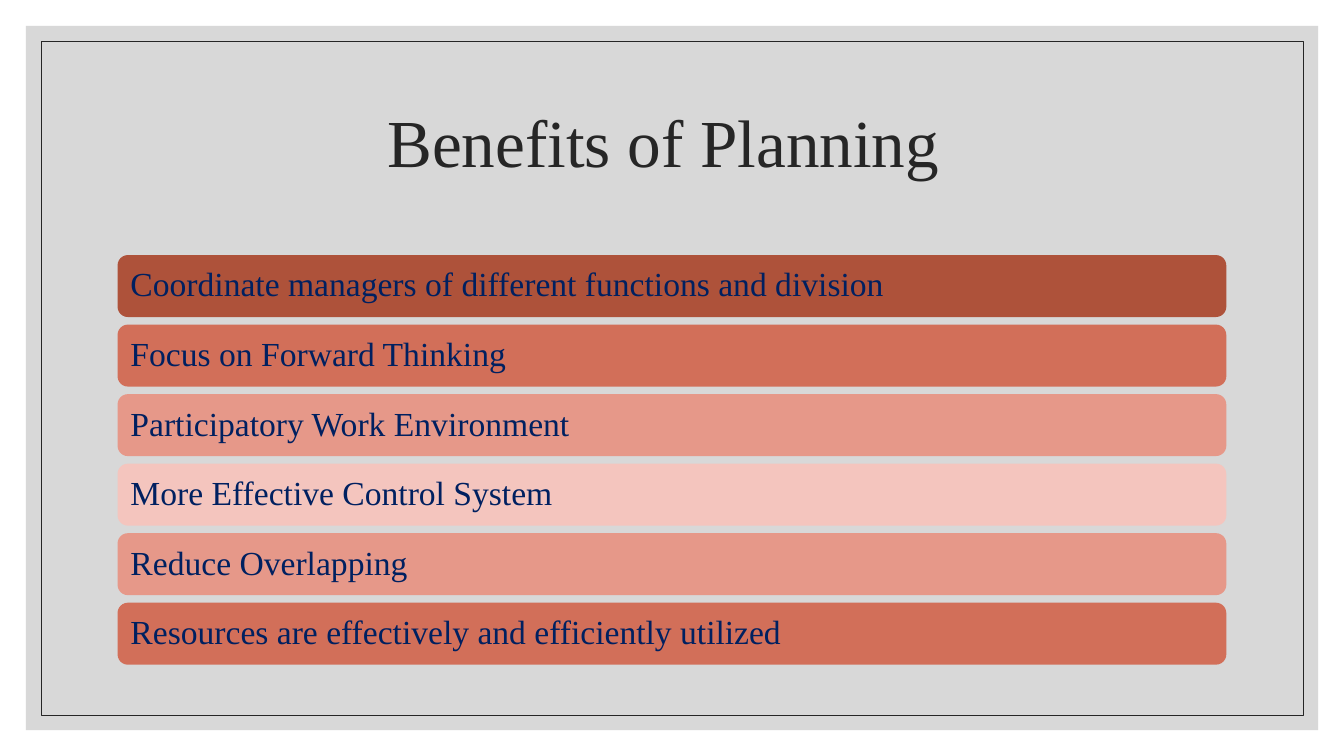
import pptx
import pptx.util
import pptx.dml.color
import pptx.enum.shapes
import pptx.enum.text
from lxml import etree
from pptx.util import Pt

COLOURS = {
    "panel": "BFBFBF",
    "ink": "262626",
    "navy": "002060",
    "rust": "AE523A",
    "coral": "D26F59",
    "salmon": "E69889",
    "blush": "F4C5BE",
}
FONT = "Times New Roman"
BENEFITS = [
    ("Coordinate managers of different functions and division", "rust"),
    ("Focus on Forward Thinking", "coral"),
    ("Participatory Work Environment", "salmon"),
    ("More Effective Control System", "blush"),
    ("Reduce Overlapping", "salmon"),
    ("Resources are effectively and efficiently utilized", "coral"),
]
SHAPES = pptx.enum.shapes.MSO_SHAPE
ALIGN = pptx.enum.text.PP_ALIGN


def colour(name):
    return pptx.dml.color.RGBColor.from_string(COLOURS[name])


def add_box(page, kind, left, top, width, height, fill=None):
    box = page.shapes.add_shape(kind, Pt(left), Pt(top), Pt(width), Pt(height))
    box.shadow.inherit = False
    box.line.fill.background()
    if fill:
        box.fill.solid()
        box.fill.fore_color.rgb = colour(fill)
    else:
        box.fill.background()
    return box


def write(box, text, size, ink, align):
    frame = box.text_frame
    frame.word_wrap = True
    frame.vertical_anchor = pptx.enum.text.MSO_ANCHOR.MIDDLE
    para = frame.paragraphs[0]
    para.text = text
    para.alignment = align
    para.line_spacing = 0.9
    para.font.name = FONT
    para.font.size = Pt(size)
    para.font.color.rgb = colour(ink)
    return frame


def add_frame(page, left, top, width, height, inset):
    """Translucent panel with a thin border set inside it."""
    panel = add_box(page, SHAPES.RECTANGLE, left, top, width, height, "panel")
    fill = panel.fill._xPr.find(".//" + pptx.oxml.ns.qn("a:srgbClr"))
    etree.SubElement(fill, pptx.oxml.ns.qn("a:alpha"), val="60000")
    border = add_box(page, SHAPES.RECTANGLE, left + inset, top + inset,
                     width - 2 * inset, height - 2 * inset)
    border.line.color.rgb = colour("ink")
    border.line.width = Pt(0.5)


def add_title(page, left, top, width, height):
    box = page.shapes.add_textbox(Pt(left), Pt(top), Pt(width), Pt(height))
    write(box, "Benefits of Planning ", 48, "ink", ALIGN.CENTER)


def add_benefits(page, left, top, width, height, gap):
    """Equal rounded bars stacked to fill the given box."""
    bar_height = (height - gap * (len(BENEFITS) - 1)) / len(BENEFITS)
    for index, (text, fill) in enumerate(BENEFITS):
        bar = add_box(page, SHAPES.ROUNDED_RECTANGLE, left,
                      top + index * (bar_height + gap), width, bar_height, fill)
        frame = write(bar, text, 24, "navy", ALIGN.LEFT)
        frame.margin_left = frame.margin_right = Pt(7.2)
        frame.margin_top = frame.margin_bottom = Pt(7.2)


def main():
    deck = pptx.Presentation()
    deck.slide_width, deck.slide_height = Pt(960), Pt(540)
    page = deck.slides.add_slide(deck.slide_layouts[6])
    add_frame(page, 18.5, 18.5, 923, 503, 10.8)
    add_title(page, 84, 50.4, 792, 108)
    add_benefits(page, 84, 182.2, 792, 292.6, 5.4)
    deck.save("out.pptx")


if __name__ == "__main__":
    main()
